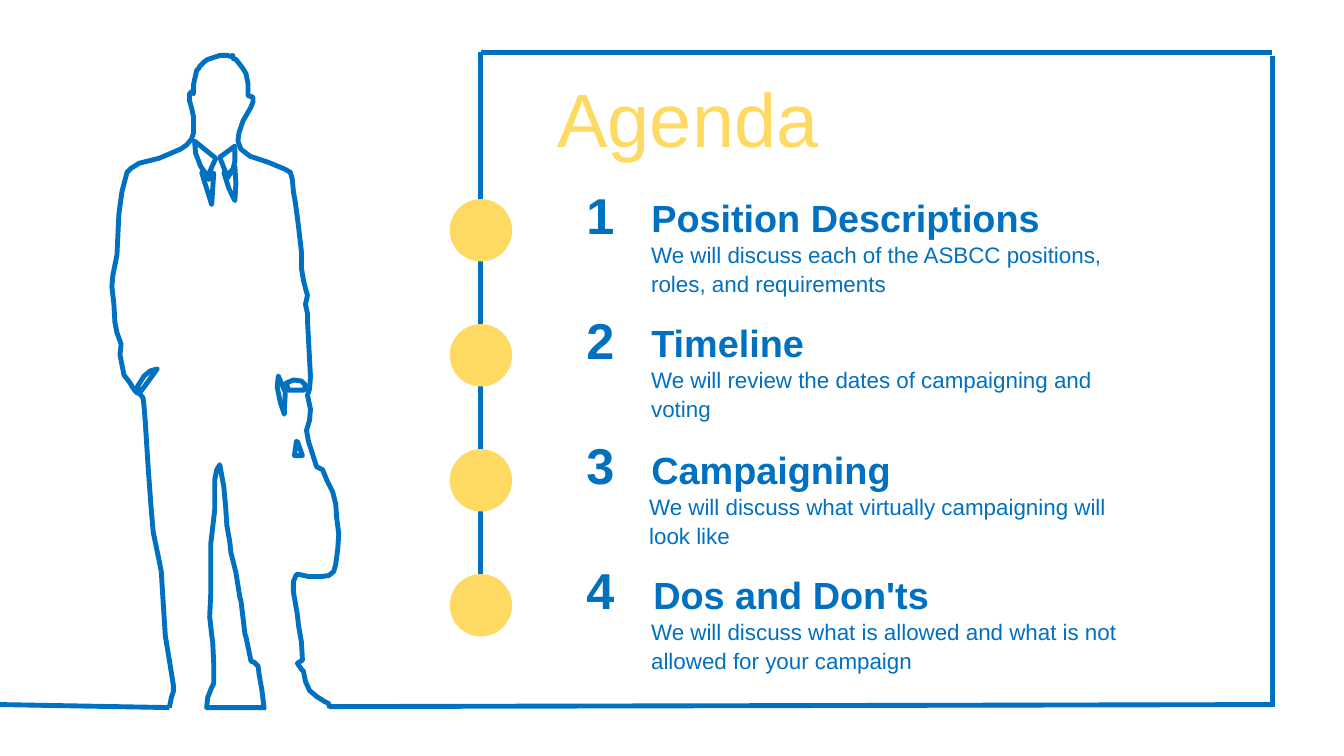
from pptx import Presentation
from pptx.dml.color import RGBColor
from pptx.enum.shapes import MSO_CONNECTOR, MSO_SHAPE
from pptx.enum.text import MSO_ANCHOR, PP_ALIGN
from pptx.oxml.ns import qn
from pptx.util import Inches, Pt
from lxml import etree

STRAIGHT = MSO_CONNECTOR.STRAIGHT
OVAL = MSO_SHAPE.OVAL
LEFT, CENTER = PP_ALIGN.LEFT, PP_ALIGN.CENTER
TOP, MIDDLE = MSO_ANCHOR.TOP, MSO_ANCHOR.MIDDLE

COLORS = {"blue": "0070C0", "yellow": "FFDA63"}
FONT = "Arial"
STROKE = 3.5

TITLE = "Agenda"
# heading, its left edge, description, its left edge, drop below the row grid
ITEMS = [
    ("Position Descriptions", 6.34,
     "We will discuss each of the ASBCC positions, roles, and requirements", 6.36, 0),
    ("Timeline", 6.34,
     "We will review the dates of campaigning and voting", 6.36, 0),
    ("Campaigning", 6.34,
     "We will discuss what virtually campaigning will look like", 6.34, 0.02),
    ("Dos and Don'ts", 6.36,
     "We will discuss what is allowed and what is not allowed for your campaign", 6.36, 0.02),
]
ROW_TOP, ROW_PITCH = 1.74, 1.24
HEADING_DROP, DETAIL_DROP, DOT_DROP = 0.12, 0.59, 0.26
NUMBER_LEFT, NUMBER_WIDTH, TEXT_WIDTH = 5.43, 1.05, 4.93
DOT = 0.57

RAIL, RIGHT, CEILING, FLOOR = 4.77, 12.62, 0.52, 7.01
FRAME = [
    ((RAIL, 5.85), (RAIL, CEILING)),
    ((RIGHT, CEILING), (RAIL, CEILING)),
    ((RIGHT, FLOOR), (RIGHT, 0.56)),
    ((RIGHT, 6.99), (3.26, FLOOR)),
    ((1.68, 7.02), (0, 6.99)),
]

# Outlines of the standing man, in hundredths of an inch
INNER_LEGS = [
    (262, 703), (260, 686), (257, 669), (256, 661), (252, 657), (249, 656), (244, 632),
    (243, 629), (239, 596), (238, 593), (234, 568), (229, 548), (228, 538), (225, 521),
    (224, 505), (222, 483), (218, 461), (215, 466), (213, 476), (213, 488), (213, 506),
    (209, 540), (209, 590), (208, 612), (210, 630), (211, 637), (212, 658), (212, 678),
    (210, 682), (206, 692), (205, 702), (264, 702),
]
LEFT_SIDE = [
    (168, 702), (170, 692), (172, 686), (172, 680), (168, 655), (164, 631), (161, 584),
    (160, 567), (157, 552), (152, 528), (150, 505), (147, 464), (144, 417), (143, 404),
    (142, 395), (139, 391), (135, 389), (132, 385), (129, 380), (123, 372), (121, 362),
    (119, 352), (120, 343), (120, 341), (116, 330), (114, 320), (113, 302), (111, 284),
    (112, 273), (116, 253), (118, 212), (121, 190), (126, 171), (130, 167), (138, 162),
    (158, 157), (172, 151), (179, 148), (185, 144), (190, 138), (192, 132), (192, 116),
    (190, 107), (188, 100), (188, 93),
]
HAIR = [
    (190, 91), (192, 93), (192, 84), (193, 79), (194, 75), (195, 70), (197, 68), (198, 66),
    (200, 64), (203, 61), (206, 59), (209, 58), (212, 57), (215, 56), (218, 55), (221, 55),
    (224, 55), (226, 55), (228, 56), (231, 55), (231, 58), (234, 59), (238, 64), (241, 68),
    (244, 73), (245, 78), (246, 83), (246, 88), (246, 95),
]
RIGHT_SIDE = [
    (250, 96), (251, 97), (251, 101), (249, 106), (248, 108), (241, 120), (237, 132),
    (236, 140), (239, 148), (248, 155), (266, 161), (283, 168), (288, 171), (290, 178),
    (291, 190), (293, 201), (296, 224), (299, 250), (299, 266), (301, 278), (303, 286),
    (305, 293), (303, 302), (305, 311), (305, 318), (308, 374), (307, 386), (305, 392),
    (306, 397), (308, 406), (307, 417), (304, 427), (306, 438), (314, 463), (320, 466),
    (324, 476), (330, 488), (333, 500), (334, 514), (336, 530), (335, 545), (333, 560),
    (331, 567), (326, 571), (319, 572), (312, 572), (306, 572), (297, 570), (294, 570),
    (291, 577), (291, 587), (295, 610), (296, 620), (299, 637), (300, 655), (295, 658),
    (299, 664), (301, 666), (303, 676), (307, 685), (314, 691), (322, 696), (326, 698),
    (327, 702),
]
BAG_GAP = [(300, 452), (295, 438), (294, 438), (292, 452), (300, 452)]
CUFF = [(286, 387), (302, 387), (303, 382), (299, 378), (291, 377), (284, 380), (286, 387)]
HAND = [(282, 411), (283, 389), (280, 382), (276, 373), (275, 384), (278, 399), (282, 411)]
RIGHT_TIE = [(233, 199), (234, 182), (233, 165), (226, 176), (222, 171), (227, 187), (233, 199)]
RIGHT_COLLAR = [(225, 174), (231, 168), (233, 160), (233, 145), (218, 156), (225, 174)]
LEFT_TIE = [(210, 203), (212, 172), (210, 172), (207, 178), (200, 171), (210, 203)]
LEFT_COLLAR = [(206, 175), (214, 157), (193, 140), (194, 152), (199, 165), (206, 175)]
POCKET = [(140, 388), (156, 366), (149, 368), (143, 373), (136, 384), (140, 388)]
MAN = [INNER_LEGS, LEFT_SIDE + HAIR + RIGHT_SIDE, BAG_GAP, CUFF, HAND,
       RIGHT_TIE, RIGHT_COLLAR, LEFT_TIE, LEFT_COLLAR, POCKET]


def color(name):
    return RGBColor.from_string(COLORS[name])


def set_stroke(shape, name):
    shape.line.color.rgb = color(name)
    shape.line.width = Pt(STROKE)


def place(shape, left, top, width, height):
    shape.left, shape.top = Inches(left), Inches(top)
    shape.width, shape.height = Inches(width), Inches(height)


def write(box, text, size, name, bold=False, align=LEFT, anchor=TOP, side=0.1):
    frame = box.text_frame
    frame.word_wrap = True
    frame.vertical_anchor = anchor
    frame.margin_left = frame.margin_right = Inches(side)
    frame.margin_top = frame.margin_bottom = Inches(0.05)
    para = frame.paragraphs[0]
    para.text = text
    para.alignment = align
    para.line_spacing = 1.06
    para.font.name = FONT
    para.font.size = Pt(size)
    para.font.bold = bold
    para.font.color.rgb = color(name)


def add_text(page, area, *args, **kwargs):
    box = page.shapes.add_textbox(*map(Inches, area))
    write(box, *args, **kwargs)


def add_frame(page):
    for start, end in FRAME:
        line = page.shapes.add_connector(STRAIGHT, *map(Inches, start + end))
        set_stroke(line, "blue")
        etree.SubElement(line._element.spPr, qn("a:effectLst"))


def add_item(page, index, item):
    heading, heading_left, detail, detail_left, drop = item
    top = ROW_TOP + index * ROW_PITCH
    dot = page.shapes.add_shape(
        OVAL, *map(Inches, (RAIL - DOT / 2, top + DOT_DROP, DOT, DOT)))
    dot.shadow.inherit = False
    dot.fill.solid()
    dot.fill.fore_color.rgb = color("yellow")
    set_stroke(dot, "yellow")
    add_text(page, (detail_left, top + DETAIL_DROP + drop, TEXT_WIDTH, 0.64),
             detail, 16, "blue")
    add_text(page, (heading_left, top + HEADING_DROP + drop, TEXT_WIDTH, 0.56),
             heading, 27, "blue", bold=True, side=0.12)
    add_text(page, (NUMBER_LEFT, top, NUMBER_WIDTH, 0.71),
             str(index + 1), 36, "blue", bold=True, align=CENTER, side=0.12)


def add_man(page):
    builder = page.shapes.build_freeform(*MAN[0][0], scale=Inches(1) / 100)
    builder.add_line_segments(MAN[0][1:], close=False)
    for outline in MAN[1:]:
        builder.move_to(*outline[0])
        builder.add_line_segments(outline[1:], close=outline[0] == outline[-1])
    man = builder.convert_to_shape()
    man.shadow.inherit = False
    man.fill.background()
    set_stroke(man, "blue")


def main():
    deck = Presentation()
    deck.slide_width, deck.slide_height = Inches(13.33), Inches(7.5)
    page = deck.slides.add_slide(deck.slide_layouts[5])
    title = page.shapes.title
    place(title, NUMBER_LEFT, 0.63, 6.79, 1.01)
    write(title, TITLE, 54, "yellow", anchor=MIDDLE)
    add_frame(page)
    for index, item in enumerate(ITEMS):
        add_item(page, index, item)
    add_man(page)
    deck.save("out.pptx")


if __name__ == "__main__":
    main()
